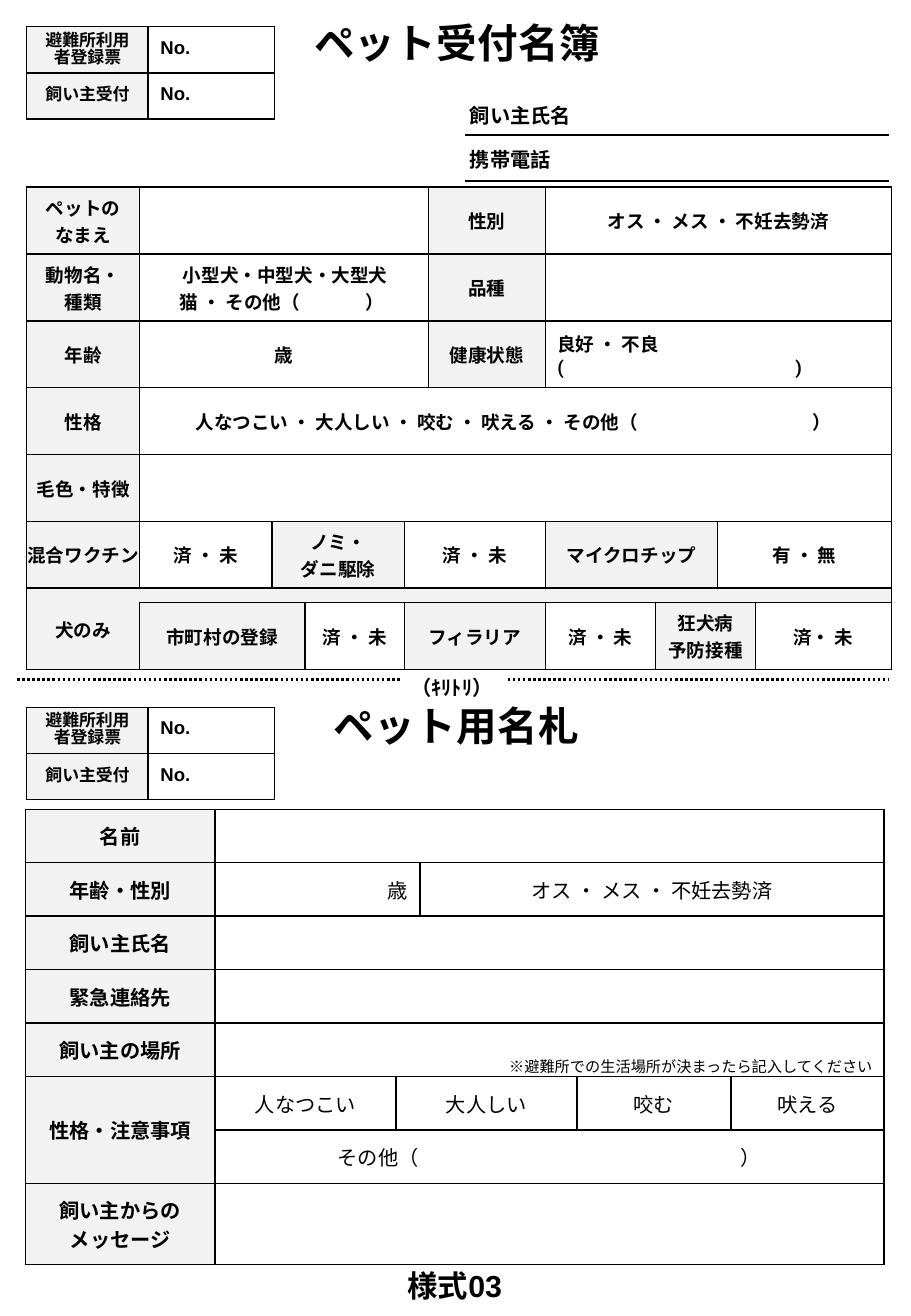
from dataclasses import dataclass
from typing import Optional

from lxml.etree import SubElement
from pptx import Presentation
from pptx.dml.color import RGBColor
from pptx.enum.dml import MSO_LINE
from pptx.enum.shapes import MSO_CONNECTOR
from pptx.enum.text import MSO_ANCHOR as Anchor, MSO_AUTO_SIZE, PP_ALIGN as Align
from pptx.oxml.ns import qn
from pptx.util import Pt

SCALE = 9144
COLORS = {"ink": "000000", "label": "F2F2F2", "paper": "FFFFFF"}
PLAIN_TABLE = "{2D5ABB26-0587-4C30-8999-92F81FD0307C}"
HEADING, BODY, LATIN = "Noto Sans CJK JP", "Roboto", "Arial"


def px(length: int) -> int:
    return length * SCALE


def color(name: str) -> RGBColor:
    return RGBColor.from_string(COLORS[name])


@dataclass
class Cell:
    text: str = ""
    columns: int = 1
    rows: int = 1
    label: bool = False
    bold: bool = True
    size: Optional[int] = None
    align: Align = Align.CENTER
    anchor: Anchor = Anchor.MIDDLE
    left: int = 10
    right: int = 10
    vertical: int = 5
    bottom: int = 5
    tab: int = 0
    borders: str = "LRTB"


@dataclass
class Form:
    left: int
    top: int
    columns: list[int]
    heights: list[int]
    rows: list[list[Cell]]
    font: str
    asian_font: str
    size: int
    line_spacing: Optional[int] = None


@dataclass
class Caption:
    text: str
    left: int
    top: int
    width: int
    height: int
    size: int
    font: str
    space_after: tuple[int, ...]
    align: Align = Align.LEFT
    anchor: Anchor = Anchor.TOP
    spacing: int = 0


@dataclass
class Rule:
    left: int
    right: int
    top: int
    dotted: bool = False


def label(text: str, columns: int = 1, rows: int = 1, inset: int = 0, borders: str = "LRTB") -> Cell:
    return Cell(text, columns, rows, True, left=inset, right=inset, borders=borders)


def light(text: str, columns: int = 1, **options) -> Cell:
    return Cell(text, columns, bold=False, **options)


def style_runs(paragraph, font: str, asian_font: str, size: int,
               bold: bool = True, spacing: int = 0) -> None:
    for run in paragraph.runs:
        run.font.size, run.font.bold, run.font.name = Pt(size), bold, font
        run.font.color.rgb = color("ink")
        properties = run.font._element
        SubElement(properties, qn("a:ea")).set("typeface", asian_font)
        if spacing:
            properties.set("spc", str(spacing))


def add_borders(table_cell, sides: str) -> None:
    properties = table_cell._tc.get_or_add_tcPr()
    for side in sides:
        border = SubElement(properties, qn(f"a:ln{side}"), w=str(Pt(1)))
        fill = SubElement(border, qn("a:solidFill"))
        SubElement(fill, qn("a:srgbClr"), val=COLORS["ink"])


def fill_cell(table_cell, cell: Cell, form: Form) -> None:
    table_cell.fill.solid()
    table_cell.fill.fore_color.rgb = color("label" if cell.label else "paper")
    table_cell.margin_left, table_cell.margin_right = px(cell.left), px(cell.right)
    table_cell.margin_top, table_cell.margin_bottom = px(cell.vertical), px(cell.bottom)
    table_cell.vertical_anchor = cell.anchor
    if not cell.text:
        return
    table_cell.text_frame.text = cell.text
    for paragraph in table_cell.text_frame.paragraphs:
        tabbed = "\t" in paragraph.text
        paragraph.alignment = Align.LEFT if tabbed else cell.align
        if form.line_spacing:
            paragraph.line_spacing = Pt(form.line_spacing)
        if tabbed:
            tabs = SubElement(paragraph._p.get_or_add_pPr(), qn("a:tabLst"))
            SubElement(tabs, qn("a:tab"), pos=str(px(cell.tab)), algn="l")
        style_runs(paragraph, form.font, form.asian_font, cell.size or form.size, cell.bold)


def add_form(slide, form: Form) -> None:
    frame = slide.shapes.add_table(
        len(form.heights), len(form.columns), px(form.left), px(form.top),
        px(sum(form.columns)), px(sum(form.heights)))
    table = frame.table
    table.first_row = table.horz_banding = False
    table._tbl.tblPr.find(qn("a:tableStyleId")).text = PLAIN_TABLE
    for column, width in zip(table.columns, form.columns):
        column.width = px(width)
    for row, height in zip(table.rows, form.heights):
        row.height = px(height)
    for row_index, cells in enumerate(form.rows):
        column_index = 0
        for cell in cells:
            while table.cell(row_index, column_index).is_spanned:
                column_index += 1
            origin = table.cell(row_index, column_index)
            last = table.cell(row_index + cell.rows - 1, column_index + cell.columns - 1)
            if cell.columns > 1 or cell.rows > 1:
                origin.merge(last)
            for row in range(row_index, row_index + cell.rows):
                for column in range(column_index, column_index + cell.columns):
                    part = table.cell(row, column)
                    add_borders(part, cell.borders if row == row_index else "LRTB")
                    part.margin_top = part.margin_bottom = px(cell.vertical)
                    paragraph = part.text_frame.paragraphs[0]
                    paragraph._p.get_or_add_endParaRPr().set("sz", str(100 * (cell.size or form.size)))
            fill_cell(origin, cell, form)
            column_index += cell.columns


def write_caption(shape, caption: Caption) -> None:
    shape.left, shape.top = px(caption.left), px(caption.top)
    shape.width, shape.height = px(caption.width), px(caption.height)
    frame = shape.text_frame
    frame.text = caption.text
    frame.word_wrap, frame.auto_size = True, MSO_AUTO_SIZE.NONE
    frame.vertical_anchor = caption.anchor
    for paragraph, space in zip(frame.paragraphs, caption.space_after):
        paragraph.alignment, paragraph.space_after = caption.align, Pt(space)
        style_runs(paragraph, caption.font, caption.font, caption.size, spacing=caption.spacing)


def add_rule(slide, rule: Rule) -> None:
    connector = slide.shapes.add_connector(
        MSO_CONNECTOR.STRAIGHT, px(rule.left), px(rule.top), px(rule.right), px(rule.top))
    connector.line.color.rgb, connector.line.width = color("ink"), Pt(1.5)
    if rule.dotted:
        connector.line.dash_style = MSO_LINE.ROUND_DOT
    SubElement(connector._element.spPr, qn("a:effectLst"))


def register_form(top: int) -> Form:
    rows = [[label(text, inset=10), Cell("No.", size=11, align=Align.LEFT)]
            for text in ("避難所利用者登録票", "飼い主受付")]
    return Form(22, top, [100, 104], [38, 38], rows, LATIN, LATIN, 10, 10)


DONE = "済 ・ 未"
SEXES = "オス ・ メス ・ 不妊去勢済"
RECEPTION = Form(22, 154, [93, 109, 27, 82, 20, 96, 91, 51, 31, 112], [55] * 6 + [12, 55], [
    [label("ペットの\nなまえ"), Cell(columns=4), label("性別"), Cell(SEXES, 4)],
    [label("動物名・\n種類"),
     Cell("小型犬・中型犬・大型犬\n猫 ・ その他（\t）", 4, left=33, right=31, tab=153),
     label("品種"), Cell(columns=4)],
    [label("年齢"), Cell("歳", 4), label("健康状態"),
     Cell("良好 ・ 不良\v(\t)", 4, align=Align.LEFT, tab=196)],
    [label("性格"),
     Cell("人なつこい ・ 大人しい ・ 咬む ・ 吠える ・ その他（\t）", 9, left=46, tab=508)],
    [label("毛色・特徴"), Cell(columns=9)],
    [label("混合ワクチン"), Cell(DONE), label("ノミ・\nダニ駆除", 2), Cell(DONE, 2),
     label("マイクロチップ", 2), Cell("有 ・ 無", 2)],
    [label("犬のみ", rows=2, borders="LTB"),
     Cell(columns=9, label=True, size=1, vertical=0, bottom=0, borders="RTB")],
    [label("市町村の登録", 2), Cell(DONE), label("フィラリア", 2), Cell(DONE),
     label("狂犬病\n予防接種", 2), Cell("済・ 未")],
], BODY, HEADING, 11)
NAME_TAG = Form(21, 666, [156, 149, 20, 129, 127, 126], [44] * 7 + [67], [
    [label("名前"), Cell(columns=5)],
    [label("年齢・性別"), light("歳", 2, align=Align.RIGHT), light(SEXES, 3)],
    [label("飼い主氏名"), Cell(columns=5)],
    [label("緊急連絡先"), Cell(columns=5)],
    [label("飼い主の場所"),
     light("※避難所での生活場所が決まったら記入してください", 5, size=9,
           align=Align.RIGHT, anchor=Anchor.BOTTOM, bottom=0)],
    [label("性格・注意事項", rows=2), light("人なつこい"), light("大人しい", 2),
     light("咬む"), light("吠える")],
    [light("その他（\t）", 5, left=101, tab=332)],
    [label("飼い主からの\nメッセージ"), Cell(columns=5)],
], BODY, HEADING, 12)
TITLE = Caption("ペット受付名簿", 172, 10, 409, 50, 24, HEADING, (30,), Align.CENTER, spacing=30)
CAPTIONS = [
    Caption("飼い主氏名\n携帯電話", 377, 80, 371, 67, 12, BODY, (12, 6)),
    Caption("（ｷﾘﾄﾘ）", 329, 551, 89, 30, 12, BODY, (12,)),
    Caption("ペット用名札", 171, 572, 409, 50, 24, HEADING, (30,), Align.CENTER, spacing=30),
    Caption("様式03", 298, 1032, 153, 51, 18, LATIN, (0,), Align.CENTER, Anchor.MIDDLE),
]
RULES = [Rule(383, 732, 111), Rule(383, 732, 149),
         Rule(14, 329, 559, True), Rule(418, 732, 559, True)]


def main() -> None:
    presentation = Presentation()
    presentation.slide_width, presentation.slide_height = px(750), px(1083)
    slide = presentation.slides.add_slide(presentation.slide_layouts[5])
    write_caption(slide.shapes.title, TITLE)
    for form in (RECEPTION, NAME_TAG, register_form(22), register_form(582)):
        add_form(slide, form)
    for caption in CAPTIONS:
        write_caption(slide.shapes.add_textbox(0, 0, 0, 0), caption)
    for rule in RULES:
        add_rule(slide, rule)
    presentation.save("out.pptx")


if __name__ == "__main__":
    main()
